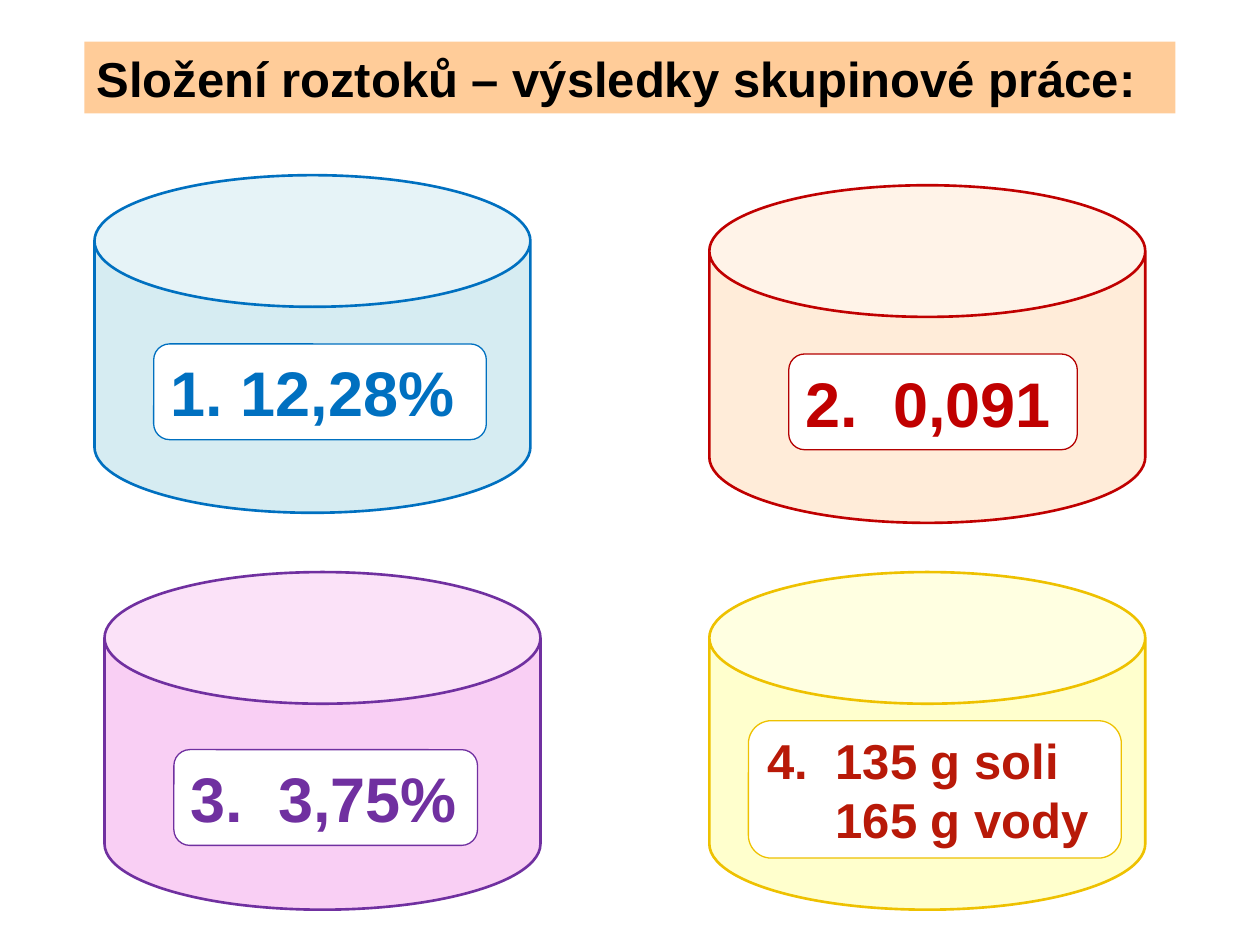
from dataclasses import dataclass

from pptx import Presentation
from pptx.dml.color import RGBColor
from pptx.enum.shapes import MSO_SHAPE
from pptx.enum.text import MSO_ANCHOR, PP_ALIGN
from pptx.util import Inches, Pt


@dataclass(frozen=True)
class Theme:
    font: str = "Arial"
    text_size: int = 28
    result_size: int = 36
    can_line: float = 1.5
    label_line: float = 0.75
    black: str = "000000"
    white: str = "FFFFFF"
    peach: str = "FFCC99"
    blue: str = "0070C0"
    pale_blue: str = "D6ECF2"
    red: str = "C00000"
    dark_red: str = "B40000"
    pale_orange: str = "FFECD9"
    purple: str = "7030A0"
    pale_pink: str = "F9CFF4"
    gold: str = "EEC100"
    pale_yellow: str = "FFFFCD"
    brick: str = "B81908"


THEME = Theme()
CAN_SIZE = (3.46, 2.68)

# left, top, rim adjustment, fill, line
CANS = [
    (0.75, 1.39, 0.39, THEME.pale_blue, THEME.blue),
    (5.63, 1.47, 0.39, THEME.pale_orange, THEME.red),
    (0.83, 4.54, 0.39, THEME.pale_pink, THEME.purple),
    (5.63, 4.54, 0.39, THEME.pale_yellow, THEME.gold),
]

# left, top, width, height, line, text colour, text size, lines
LABELS = [
    (1.22, 2.73, 2.64, 0.76, THEME.blue, THEME.blue, THEME.result_size, ["1. 12,28%"]),
    (6.26, 2.81, 2.29, 0.76, THEME.dark_red, THEME.red, THEME.result_size, ["2.\t0,091"]),
    (1.38, 5.95, 2.41, 0.76, THEME.purple, THEME.purple, THEME.result_size, ["3.\t3,75%"]),
    (5.94, 5.72, 2.96, 1.09, THEME.gold, THEME.brick, THEME.text_size,
     ["4.\t135 g soli", "165 g vody"]),
]


def add_block(page, kind, left, top, width, height, fill, line=None, line_width=0):
    block = page.shapes.add_shape(
        kind, Inches(left), Inches(top), Inches(width), Inches(height))
    block.shadow.inherit = False
    block.fill.solid()
    block.fill.fore_color.rgb = RGBColor.from_string(fill)
    if line:
        block.line.color.rgb = RGBColor.from_string(line)
        block.line.width = Pt(line_width)
    else:
        block.line.fill.background()
    return block


def write_lines(block, lines, size, color):
    frame = block.text_frame
    frame.word_wrap = True
    frame.vertical_anchor = MSO_ANCHOR.MIDDLE
    frame.text = "\n".join(lines)
    for para in frame.paragraphs:
        para.alignment = PP_ALIGN.LEFT
        for span in para.runs:
            span.font.name = THEME.font
            span.font.size = Pt(size)
            span.font.bold = True
            span.font.color.rgb = RGBColor.from_string(color)


def hang_numbers(block, size):
    """Align the text after each tabbed number, and the lines below it."""
    hang = Pt(round(1.39 * size))
    paras = block.text_frame.paragraphs
    if "\t" not in paras[0].text:
        return
    for para in paras:
        properties = para._p.get_or_add_pPr()
        properties.set("marL", str(hang))
        properties.set("indent", str(-hang if "\t" in para.text else 0))


def add_title(page):
    title = add_block(page, MSO_SHAPE.RECTANGLE, 0.67, 0.33, 8.66, 0.57, THEME.peach)
    write_lines(title, ["Složení roztoků – výsledky skupinové práce:"],
                THEME.text_size, THEME.black)


def add_can(page, left, top, rim, fill, line):
    can = add_block(page, MSO_SHAPE.CAN, left, top, *CAN_SIZE, fill, line, THEME.can_line)
    can.adjustments[0] = rim


def add_label(page, left, top, width, height, line, color, size, lines):
    label = add_block(page, MSO_SHAPE.ROUNDED_RECTANGLE, left, top, width, height,
                      THEME.white, line, THEME.label_line)
    write_lines(label, lines, size, color)
    hang_numbers(label, size)


def main():
    deck = Presentation()
    deck.slide_width, deck.slide_height = Inches(10), Inches(7.5)
    page = deck.slides.add_slide(deck.slide_layouts[6])
    add_title(page)
    for can in CANS:
        add_can(page, *can)
    for label in LABELS:
        add_label(page, *label)
    deck.save("out.pptx")


if __name__ == "__main__":
    main()
